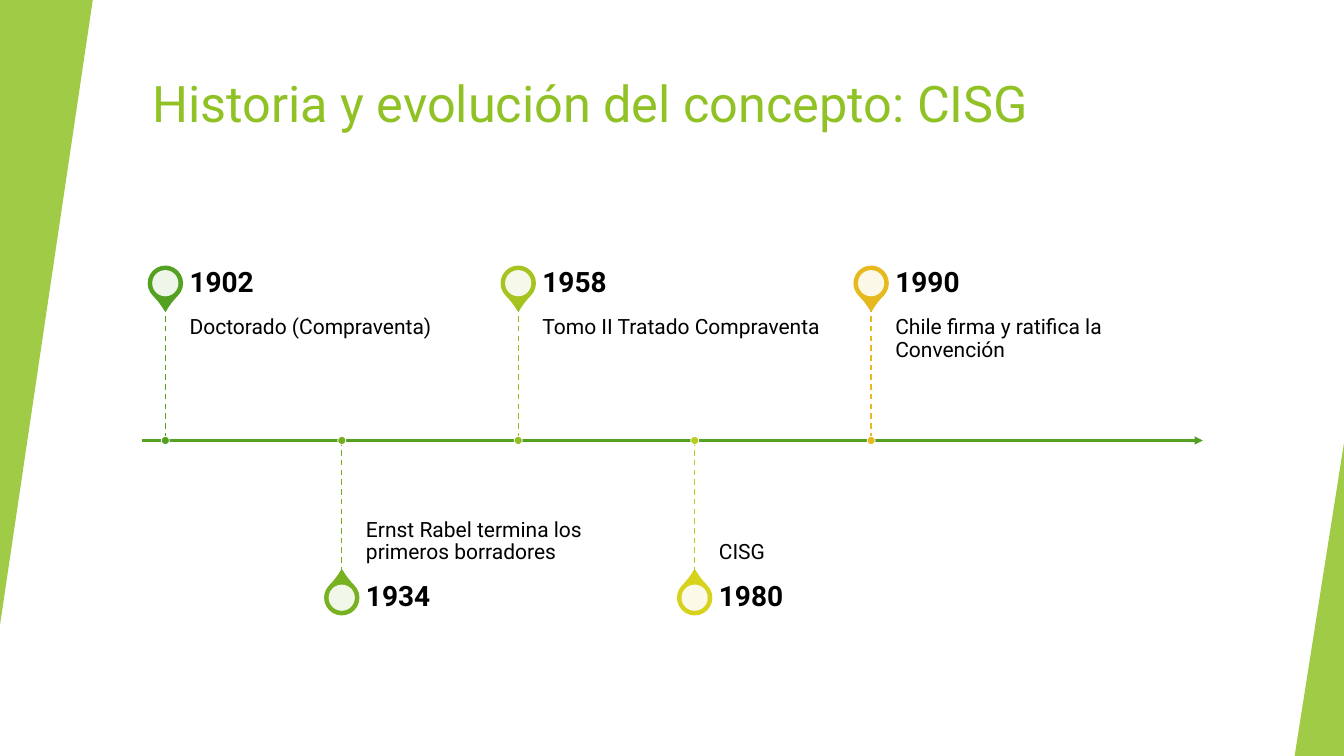
from dataclasses import dataclass
from pptx import Presentation
from pptx.dml.color import RGBColor
from pptx.enum.dml import MSO_LINE
from pptx.enum.shapes import MSO_CONNECTOR, MSO_SHAPE as Preset
from pptx.enum.text import MSO_ANCHOR as Anchor, MSO_AUTO_SIZE, PP_ALIGN
from pptx.oxml.ns import qn
from pptx.oxml.xmlchemy import OxmlElement
from pptx.shapes.autoshape import Shape
from pptx.shapes.connector import Connector
from pptx.slide import Slide
from pptx.text.text import TextFrame
from pptx.util import Inches, Pt

FONT = "Roboto"
COLORS = {
    "title": "90C226",
    "edge": "90C226",
    "axis": "54A021",
    "text": "000000",
    "white": "FFFFFF",
}
AXIS_Y = 4.37
FIRST_X = 1.64
STEP = 1.75
TEXT_GAP = 0.24
TEXT_WIDTH = 2.92
YEAR_HEIGHT = 0.47
STEM_HEIGHT = 1.33
PIN_SIZE = 0.33
HOLE_SIZE = 0.26
DOT_SIZE = 0.08


@dataclass(frozen=True)
class Milestone:
    year: str
    event: str
    pin_color: str
    stem_color: str


@dataclass(frozen=True)
class Side:
    pin_y: float
    year_top: float
    event_top: float
    stem_top: float
    stem_bottom: float
    rotation: int
    anchor: Anchor
    insets: tuple[float, float, float, float]


ABOVE = Side(2.81, 2.58, 3.04, 3.04, AXIS_Y, 135, Anchor.TOP, (0, 0.1, 0.1, 0.16))
BELOW = Side(5.93, 5.69, AXIS_Y, AXIS_Y, 5.69, 315, Anchor.BOTTOM, (0, 0.16, 0, 0.1))

MILESTONES = [
    Milestone("1902", "Doctorado (Compraventa)", "54A021", "54A021"),
    Milestone("1934", "Ernst Rabel termina los primeros borradores", "79B220", "71AE20"),
    Milestone("1958", "Tomo II Tratado Compraventa", "A5C41F", "92BC1F"),
    Milestone("1980", "CISG", "D7D31D", "B9CB1E"),
    Milestone("1990", "Chile firma y ratifica la Convención", "E6B91E", "E6B91E"),
]


def write_text(frame: TextFrame, text: str, *, size: float, color: str = COLORS["text"],
               bold: bool = False, anchor: Anchor = Anchor.TOP, spacing: float = 1.0,
               insets: tuple[float, float, float, float] = (0.1, 0.05, 0.1, 0.05)) -> None:
    frame.word_wrap = True
    frame.auto_size = MSO_AUTO_SIZE.NONE
    frame.vertical_anchor = anchor
    (frame.margin_left, frame.margin_top,
     frame.margin_right, frame.margin_bottom) = map(Inches, insets)
    para = frame.paragraphs[0]
    para.alignment = PP_ALIGN.LEFT
    para.line_spacing = spacing
    span = para.add_run()
    span.text = text
    span.font.name = FONT
    span.font.size = Pt(size)
    span.font.bold = bold
    span.font.color.rgb = RGBColor.from_string(color)


def add_shape(page: Slide, preset: Preset, left: float, top: float, width: float,
              height: float, fill: str, *, opacity: int = 100, line: str | None = None,
              line_width: float = 1, rotation: float = 0,
              adjustment: float | None = None) -> Shape:
    shape = page.shapes.add_shape(preset, *map(Inches, (left, top, width, height)))
    shape.shadow.inherit = False
    shape.rotation = rotation
    if adjustment is not None:
        shape.adjustments[0] = adjustment
    shape.fill.solid()
    shape.fill.fore_color.rgb = RGBColor.from_string(fill)
    if opacity < 100:
        alpha = OxmlElement("a:alpha")
        alpha.set("val", str(opacity * 1000))
        shape.element.spPr.find(qn("a:solidFill"))[0].append(alpha)
    if line:
        shape.line.color.rgb = RGBColor.from_string(line)
        shape.line.width = Pt(line_width)
    else:
        shape.line.fill.background()
    return shape


def add_centered(page: Slide, preset: Preset, x: float, y: float, size: float,
                 fill: str, **style) -> Shape:
    return add_shape(page, preset, x - size / 2, y - size / 2, size, size, fill, **style)


def add_line(page: Slide, x1: float, y1: float, x2: float, y2: float, color: str, *,
             width: float, dashed: bool = False, arrow: bool = False) -> Connector:
    line = page.shapes.add_connector(MSO_CONNECTOR.STRAIGHT, *map(Inches, (x1, y1, x2, y2)))
    line.line.color.rgb = RGBColor.from_string(color)
    line.line.width = Pt(width)
    if dashed:
        line.line.dash_style = MSO_LINE.DASH
    if arrow:
        tail = OxmlElement("a:tailEnd")
        tail.set("type", "triangle")
        line.element.spPr.find(qn("a:ln")).append(tail)
    line.element.spPr.append(OxmlElement("a:effectLst"))
    return line


def add_text(page: Slide, left: float, top: float, height: float, text: str, **style) -> None:
    box = page.shapes.add_textbox(*map(Inches, (left, top, TEXT_WIDTH, height)))
    write_text(box.text_frame, text, spacing=0.9, **style)


def add_milestone(page: Slide, x: float, milestone: Milestone, side: Side) -> None:
    add_centered(page, Preset.TEAR, x, side.pin_y, PIN_SIZE, milestone.pin_color,
                 line=milestone.pin_color, line_width=1.5,
                 rotation=side.rotation, adjustment=1.15)
    add_centered(page, Preset.OVAL, x, side.pin_y, HOLE_SIZE, COLORS["white"], opacity=90)
    add_text(page, x + TEXT_GAP, side.event_top, STEM_HEIGHT, milestone.event,
             size=15, anchor=side.anchor, insets=side.insets)
    add_text(page, x + TEXT_GAP, side.year_top, YEAR_HEIGHT, milestone.year,
             size=20, bold=True, anchor=Anchor.MIDDLE, insets=(0, 0, 0.14, 0))
    add_line(page, x, side.stem_top, x, side.stem_bottom, milestone.stem_color,
             width=1, dashed=True)
    add_centered(page, Preset.OVAL, x, AXIS_Y, DOT_SIZE, milestone.stem_color,
                 line=COLORS["white"], line_width=0.5)


def main() -> None:
    deck = Presentation()
    deck.slide_width, deck.slide_height = Inches(13.33), Inches(7.5)
    page = deck.slides.add_slide(deck.slide_layouts[5])

    title = page.shapes.title
    title.left, title.top, title.width, title.height = map(Inches, (1.41, 0.67, 11.15, 1.2))
    write_text(title.text_frame, "Historia y evolución del concepto: CISG",
               size=36, color=COLORS["title"])

    for left, top, width, height, rotation in [(0, 0, 0.92, 6.2, 180),
                                               (12.84, 4.39, 0.49, 3.11, 0)]:
        add_shape(page, Preset.ISOSCELES_TRIANGLE, left, top, width, height, COLORS["edge"],
                  opacity=85, rotation=rotation, adjustment=1)

    add_line(page, 1.41, AXIS_Y, 11.93, AXIS_Y, COLORS["axis"], width=1.5, arrow=True)
    for index, milestone in enumerate(MILESTONES):
        side = BELOW if index % 2 else ABOVE
        add_milestone(page, FIRST_X + index * STEP, milestone, side)

    deck.save("out.pptx")


if __name__ == "__main__":
    main()
